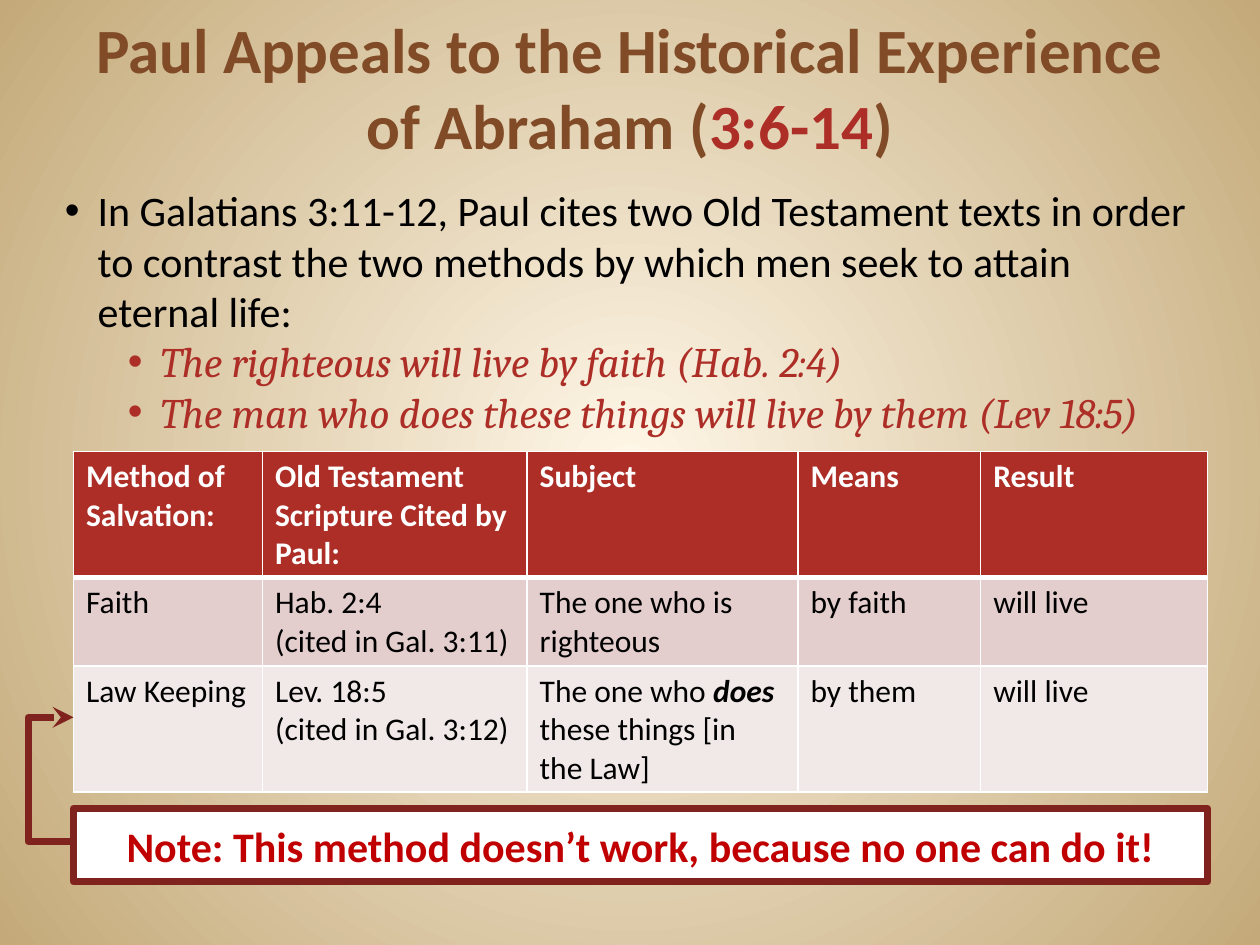
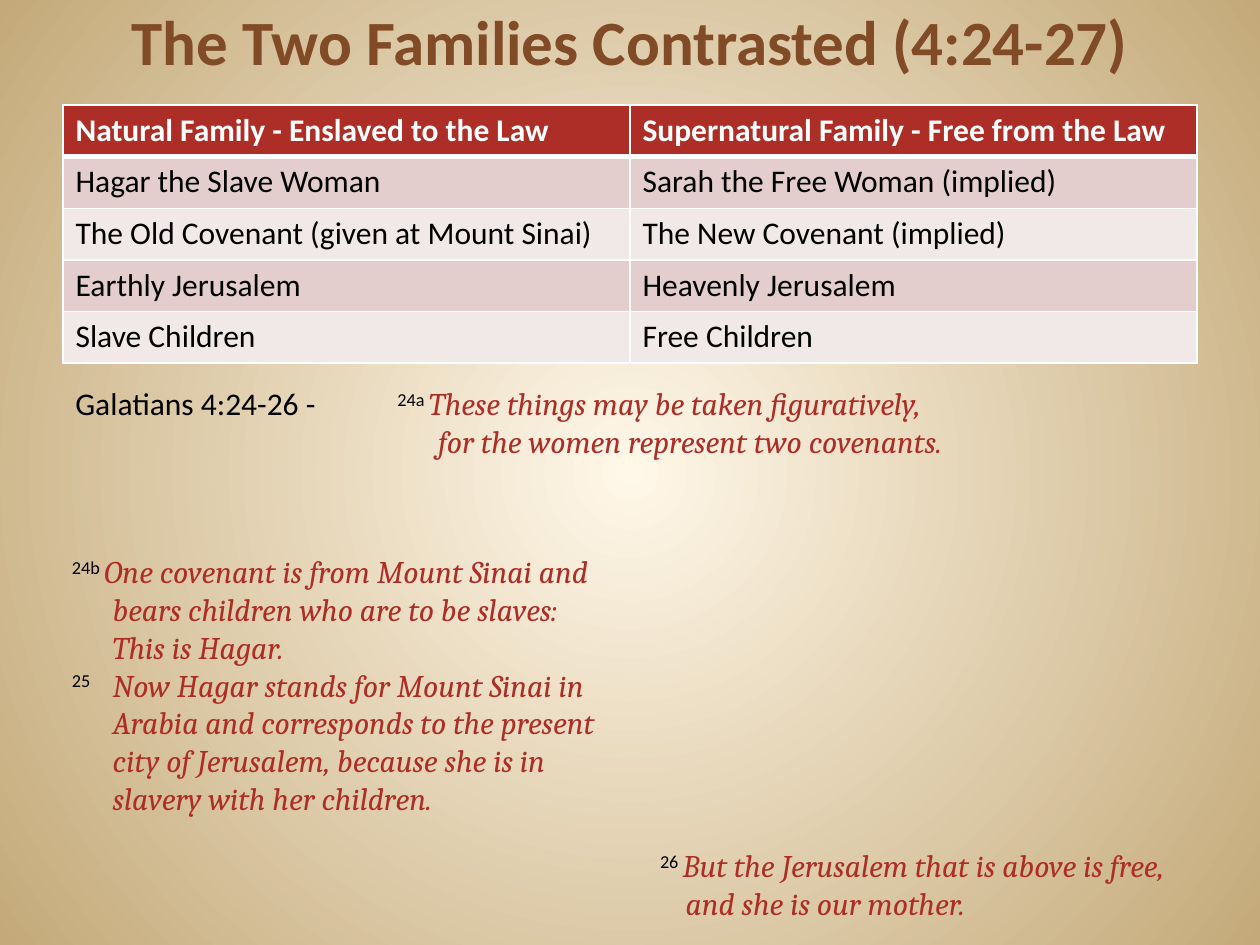
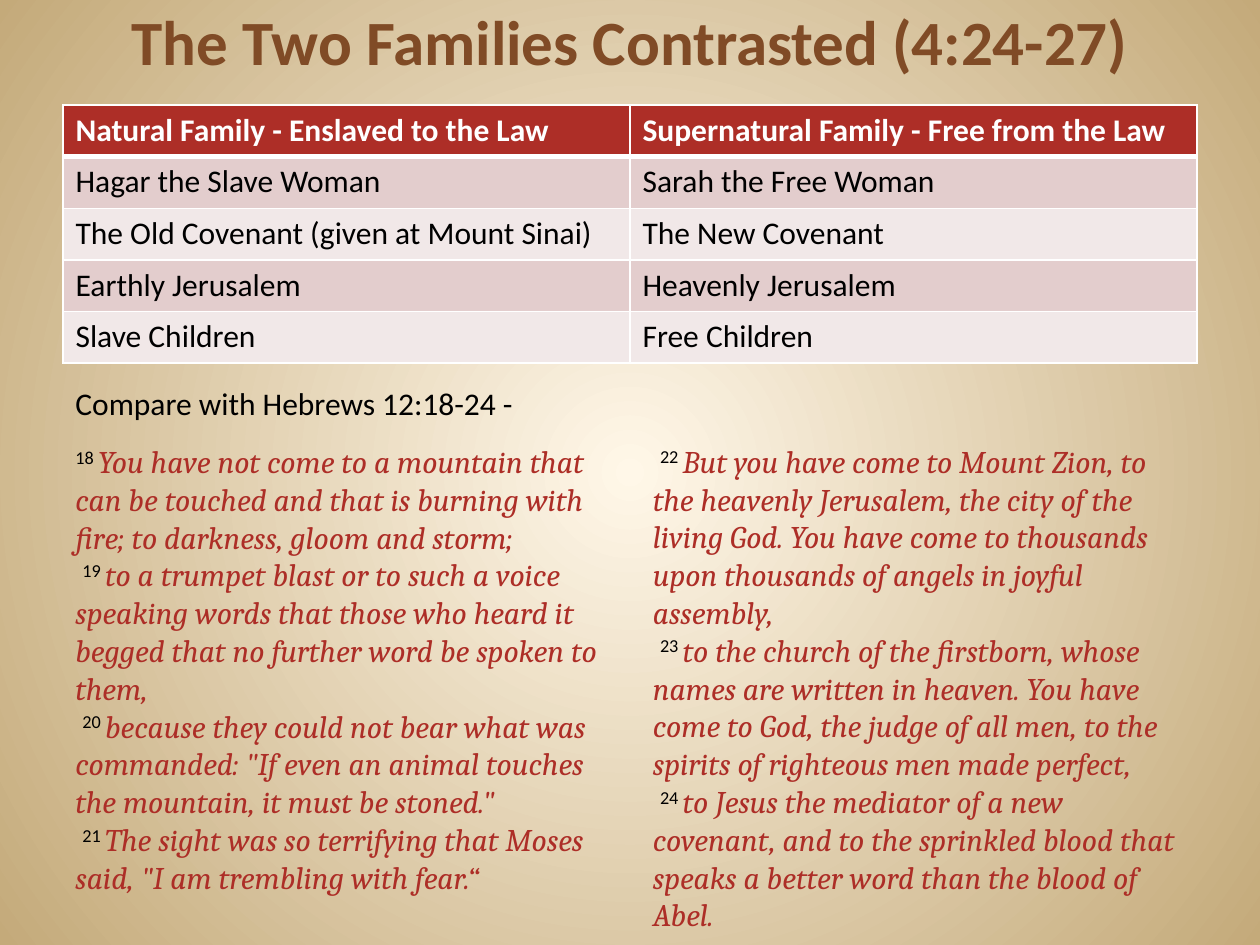
from typing import NamedTuple, Sequence

from lxml.etree import SubElement
from pptx import Presentation
from pptx.dml.color import RGBColor
from pptx.enum.shapes import MSO_SHAPE as Preset
from pptx.enum.text import MSO_ANCHOR as Anchor, MSO_AUTO_SIZE as AutoSize, PP_ALIGN as Align
from pptx.oxml.ns import qn
from pptx.util import Inches, Pt

WIDTH, HEIGHT = Inches(10), Inches(7.5)
COLUMNS, ROWS = 120, 90  # square grid cells

BLACK = RGBColor(0x00, 0x00, 0x00)
WHITE = RGBColor(0xFF, 0xFF, 0xFF)
BROWN = RGBColor(0x80, 0x4B, 0x26)
BRICK = RGBColor(0xAD, 0x2E, 0x27)
DARK_BRICK = RGBColor(0x80, 0x22, 0x1D)
ALERT_RED = RGBColor(0xC0, 0x00, 0x00)
BANDS = (RGBColor(0xE3, 0xCD, 0xCD), RGBColor(0xF1, 0xE8, 0xE8))
GLOW = RGBColor(0xFF, 0xF7, 0xE8)
PARCHMENT = RGBColor(0xC4, 0xAA, 0x7A)

TITLE_SIZE, BODY_SIZE, TEXT_SIZE = 36, 24, 18
SUPERSCRIPT = "30000"


class Style(NamedTuple):
    color: RGBColor = BLACK
    font: str = "Calibri"
    bold: bool = False
    italic: bool = False
    raised: bool = False


PLAIN = Style()
EMPHASIS = Style(bold=True, italic=True)
HEADER = Style(WHITE, bold=True)
TITLE = Style(BROWN, bold=True)
TITLE_VERSES = Style(BRICK, bold=True)
NOTE = Style(ALERT_RED, bold=True)
SCRIPTURE = Style(BRICK, "Cambria", italic=True)
VERSE_NUMBER = Style(raised=True)


class Piece(NamedTuple):
    text: str
    style: Style = PLAIN


class Line(NamedTuple):
    pieces: Sequence[Piece]
    hang: float = 0  # inches the first line hangs out
    level: int = 0
    bullet: bool = False
    align: Align = Align.LEFT


class Area(NamedTuple):
    """A place on the slide, in grid columns and rows."""
    column: float
    row: float
    columns: float
    rows: float

    def emu(self) -> tuple[int, int, int, int]:
        return (across(self.column), down(self.row), across(self.columns), down(self.rows))


def across(columns: float) -> int:
    return round(WIDTH * columns / COLUMNS)


def down(rows: float) -> int:
    return round(HEIGHT * rows / ROWS)


def plain(text: str) -> Line:
    return Line([Piece(text)])


def verse(number: str, text: str, hang: float = 0, lead: str = " ") -> Line:
    pieces = [Piece(lead)] if lead else []
    return Line(pieces + [Piece(number, VERSE_NUMBER), Piece(text, SCRIPTURE)], hang)


def write(frame, lines: Sequence[Line], size: int) -> None:
    frame.word_wrap = True
    for index, line in enumerate(lines):
        paragraph = frame.paragraphs[0] if index == 0 else frame.add_paragraph()
        paragraph.alignment = line.align
        paragraph.level = line.level
        if line.hang:
            indent(paragraph, line)
        for text, style in line.pieces:
            run = paragraph.add_run()
            run.text = text
            font = run.font
            font.name, font.size = style.font, Pt(size)
            font.bold, font.italic = style.bold, style.italic
            font.color.rgb = style.color
            if style.raised:
                run._r.get_or_add_rPr().set("baseline", SUPERSCRIPT)


def indent(paragraph, line: Line) -> None:
    properties = paragraph._p.get_or_add_pPr()
    left = str(Inches(line.hang + line.level / 2))
    properties.set("marL", left)
    properties.set("indent", str(-Inches(line.hang)))
    if line.bullet:
        SubElement(properties, qn("a:buFont"), typeface="Arial")
        SubElement(properties, qn("a:buChar"), char="•")
    else:
        stops = SubElement(properties, qn("a:tabLst"))
        SubElement(stops, qn("a:tab"), pos=left, algn="l")


def add_text(slide, area: Area, lines: Sequence[Line], size: int = TEXT_SIZE) -> None:
    frame = slide.shapes.add_textbox(*area.emu()).text_frame
    write(frame, lines, size)
    frame.auto_size = AutoSize.SHAPE_TO_FIT_TEXT


def add_title(slide, rows: float, pieces: Sequence[Piece]) -> None:
    frame = slide.shapes.add_textbox(*Area(6, 0, 108, rows).emu()).text_frame
    frame.vertical_anchor = Anchor.BOTTOM
    write(frame, [Line(pieces, align=Align.CENTER)], TITLE_SIZE)


def set_borders(cell, top: float, bottom: float) -> None:
    properties = cell._tc.get_or_add_tcPr()
    for side, points in (("L", 1), ("R", 1), ("T", top), ("B", bottom)):
        edge = SubElement(properties, qn(f"a:ln{side}"), w=str(Pt(points)))
        fill = SubElement(edge, qn("a:solidFill"))
        SubElement(fill, qn("a:srgbClr"), val=str(WHITE))


def add_banded_table(slide, area: Area, widths: Sequence[float], heights: Sequence[float],
                     headers: Sequence[str], body: Sequence[Sequence[Sequence[Line]]]) -> None:
    """Draw a table with a brick header above alternating bands; sizes are in inches."""
    head = [[Line([Piece(text, HEADER)])] for text in headers]
    table = slide.shapes.add_table(len(heights), len(widths), *area.emu()).table
    for column, width in zip(table.columns, widths):
        column.width = Inches(width)
    for r, (cells, height) in enumerate(zip([head, *body], heights)):
        table.rows[r].height = Inches(height)
        for c, lines in enumerate(cells):
            cell = table.cell(r, c)
            set_borders(cell, top=3 if r == 1 else 1, bottom=3 if r == 0 else 1)
            cell.fill.solid()
            cell.fill.fore_color.rgb = BANDS[(r - 1) % 2] if r else BRICK
            write(cell.text_frame, lines, TEXT_SIZE)


def add_note_callout(slide, area: Area, text: str) -> None:
    note = slide.shapes.add_shape(Preset.LINE_CALLOUT_3, *area.emu())
    note.shadow.inherit = False
    for index, share in enumerate((-1.24, 0, -1.24, -0.04, 0.45, -0.04, 0.45, 0)):
        note.adjustments[index] = share
    note.fill.solid()
    note.fill.fore_color.rgb = WHITE
    note.line.color.rgb = DARK_BRICK
    note.line.width = Pt(4)
    SubElement(note.line._get_or_add_ln(), qn("a:headEnd"), type="stealth")
    note.text_frame.vertical_anchor = Anchor.MIDDLE
    write(note.text_frame, [Line([Piece(text, NOTE)], align=Align.CENTER)], BODY_SIZE)


def set_background(master) -> None:
    """Let a round glow fade into parchment behind every slide."""
    fill = master.background.fill
    fill.gradient()
    for stop, color, position in zip(fill.gradient_stops, (GLOW, PARCHMENT), (0, 1)):
        stop.color.rgb = color
        stop.position = position
    gradient = master.element.xpath("./p:cSld/p:bg//a:gradFill")[0]
    for linear in gradient.findall(qn("a:lin")):
        gradient.remove(linear)
    circle = SubElement(gradient, qn("a:path"), attrib={"path": "circle"})
    SubElement(circle, qn("a:fillToRect"), l="50000", t="50000", r="50000", b="50000")


def add_abraham(slide) -> None:
    add_title(slide, 16, [
        Piece("Paul Appeals to the Historical Experience of Abraham (", TITLE),
        Piece("3:6-14", TITLE_VERSES), Piece(")", TITLE)])
    add_banded_table(
        slide, Area(7, 43, 108, 32.4), (1.5, 2.1, 2.15, 1.45, 1.8), (1, 0.7, 1),
        ("Method of Salvation:", "Old Testament Scripture Cited by Paul:",
         "Subject", "Means", "Result"),
        [[[plain("Faith")],
          [plain("Hab. 2:4"), plain("(cited in Gal. 3:11)")],
          [plain("The one who is righteous")],
          [plain("by faith")], [plain("will live")]],
         [[plain("Law Keeping")],
          [plain("Lev. 18:5"), plain("(cited in Gal. 3:12)")],
          [Line([Piece("The one who "), Piece("does", EMPHASIS),
                 Piece(" these things [in the Law]")])],
          [plain("by them")], [plain("will live")]]])
    citations = ("The righteous will live by faith (Hab. 2:4)",
                 "The man who does these things will live by them (Lev 18:5)")
    add_text(slide, Area(5, 17, 110, 25.5), [
        Line([Piece("In Galatians 3:11-12, Paul cites two Old Testament texts in order to contrast "
                    "the two methods by which men seek to attain eternal life:")],
             hang=0.26, bullet=True),
        *(Line([Piece(text, SCRIPTURE)], hang=0.26, level=1, bullet=True)
          for text in citations)], BODY_SIZE)
    add_note_callout(slide, Area(7, 77, 108, 7),
                     "Note: This method doesn’t work, because no one can do it!")


def add_families(slide, passage: str, remark: str = "") -> None:
    """Draw the title, the contrast table and the label of the passage below it."""
    add_title(slide, 8, [Piece("The Two Families Contrasted (4:24-27)", TITLE)])
    contrasts = (("Hagar the Slave Woman", "Sarah the Free Woman" + remark),
                 ("The Old Covenant (given at Mount Sinai)", "The New Covenant" + remark),
                 ("Earthly Jerusalem", "Heavenly Jerusalem"),
                 ("Slave Children", "Free Children"))
    add_banded_table(
        slide, Area(6, 10, 108, 24.4), (4.5, 4.5), [0.41] * 5,
        ("Natural Family - Enslaved to the Law", "Supernatural Family - Free from the Law"),
        [[[plain(text)] for text in pair] for pair in contrasts])
    add_text(slide, Area(6, 36, 46, 4.8), [plain(passage)])


def add_galatians(slide) -> None:
    add_families(slide, "Galatians 4:24-26 -", " (implied)")
    add_text(slide, Area(36, 36, 55, 12), [
        verse("24a ", "These things may be taken figuratively, for the women represent "
              "two covenants.", 0.38)])
    add_text(slide, Area(5, 52, 53, 26.6), [
        verse("24b ", "One covenant is from Mount Sinai and bears children who are to be "
              "slaves: This is Hagar.", 0.38),
        verse("25\t", "Now Hagar stands for Mount Sinai in Arabia and corresponds to the "
              "present city of Jerusalem, because she is in slavery with her children.", 0.38)])
    add_text(slide, Area(61, 80, 53, 8.5), [
        verse("26 ", "But the Jerusalem that is above is free, and she is our mother.", 0.26)])


def add_hebrews(slide) -> None:
    add_families(slide, "Compare with Hebrews 12:18-24 -")
    add_text(slide, Area(6, 41.5, 53, 45), [
        verse("18 ", "You have not come to a mountain that can be touched and that is burning "
              "with fire; to darkness, gloom and storm;", lead=""),
        verse("19 ", "to a trumpet blast or to such a voice speaking words that those who heard "
              "it begged that no further word be spoken to them,"),
        verse("20 ", "because they could not bear what was commanded: \"If even an animal "
              "touches the mountain, it must be stoned.\""),
        verse("21 ", "The sight was so terrifying that Moses said, \"I am trembling with fear.“")])
    add_text(slide, Area(61, 41.5, 53, 48.5), [
        verse("22 ", "But you have come to Mount Zion, to the heavenly Jerusalem, the city of "
              "the living God. You have come to thousands upon thousands of angels in joyful "
              "assembly,"),
        verse("23 ", "to the church of the firstborn, whose names are written in heaven. You "
              "have come to God, the judge of all men, to the spirits of righteous men made "
              "perfect,"),
        verse("24 ", "to Jesus the mediator of a new covenant, and to the sprinkled blood that "
              "speaks a better word than the blood of Abel.")])


def main() -> None:
    deck = Presentation()
    deck.slide_width, deck.slide_height = WIDTH, HEIGHT
    set_background(deck.slide_master)
    blank = deck.slide_layouts[6]
    for fill_slide in (add_abraham, add_galatians, add_hebrews):
        fill_slide(deck.slides.add_slide(blank))
    deck.save("out.pptx")


if __name__ == "__main__":
    main()
